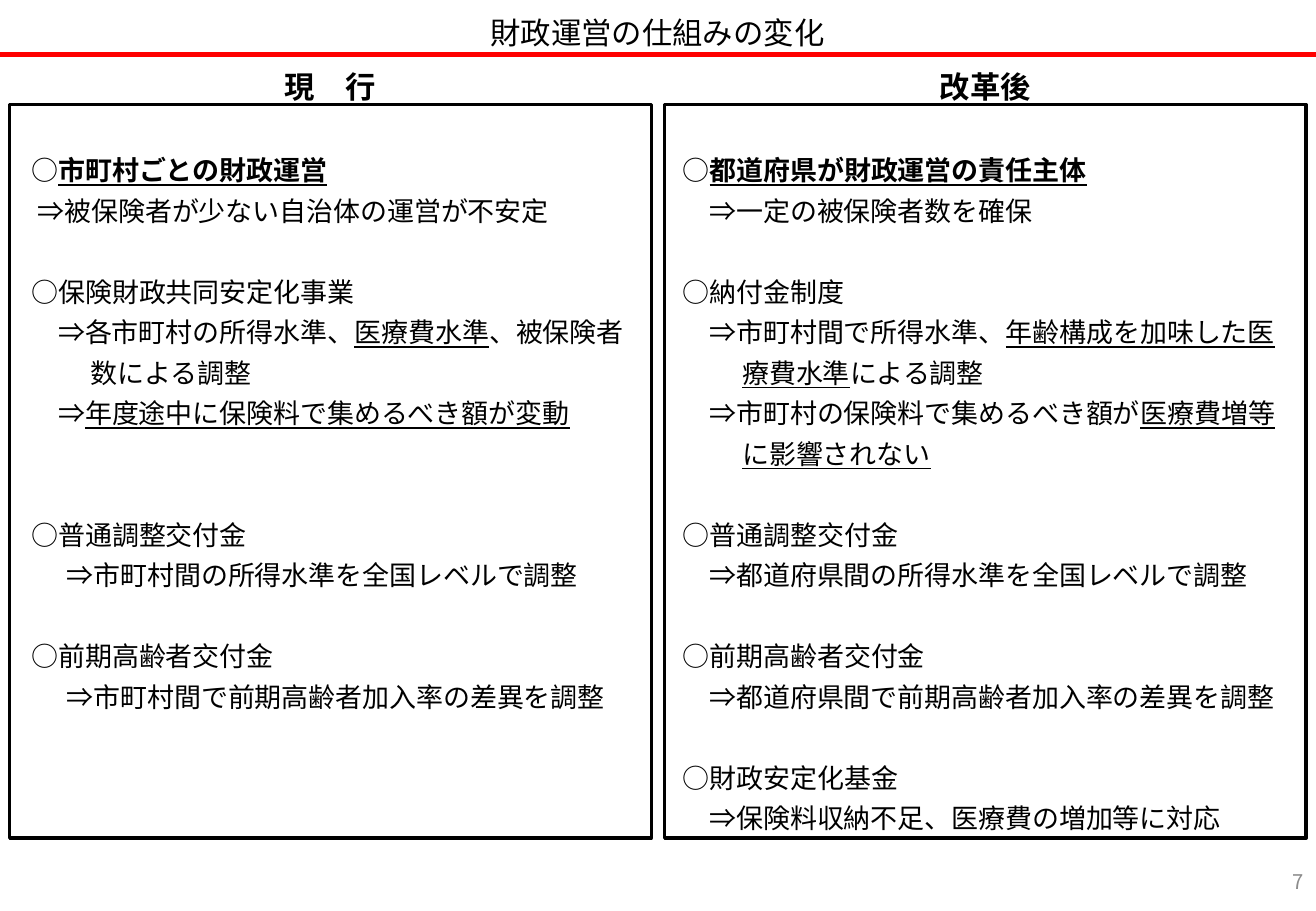
import dataclasses

import lxml.etree
import pptx
import pptx.dml.color
import pptx.enum.shapes
import pptx.enum.text
import pptx.oxml.ns
import pptx.util

ALIGN = pptx.enum.text.PP_ALIGN
ANCHOR = pptx.enum.text.MSO_ANCHOR


@dataclasses.dataclass(frozen=True)
class Theme:
    black: str = "000000"
    red: str = "FF0000"
    gray: str = "8C8C8C"
    font: str = "Noto Sans CJK JP"
    heading_font: str = "Calibri"
    title_size: int = 18
    body_size: int = 16
    number_size: int = 12
    title_leading: int = 28
    body_leading: int = 24


@dataclasses.dataclass(frozen=True)
class Box:
    left: float
    top: float
    width: float
    height: float


THEME = Theme()
SLIDE_WIDTH = pptx.util.Inches(10.83)
SLIDE_HEIGHT = pptx.util.Inches(7.5)
GRID = 100

PLAIN = {}
UNDERLINED = {"underline": True}
STRONG = {"underline": True, "bold": True}

ITEM = {"margin": 0.19, "indent": -0.19}
NEXT_ITEM = {**ITEM, "blank_lines": 1}
LATE_ITEM = {**ITEM, "blank_lines": 2}
SLIGHT = {"margin": 0.05}
DETAIL = {"margin": 0.22}
DEEP = {"margin": 0.29}
HANGING = {"margin": 0.49, "indent": -0.27}

CURRENT = [
    (ITEM, [("○", PLAIN), ("市町村ごとの財政運営", STRONG)]),
    (SLIGHT, [("⇒被保険者が少ない自治体の運営が不安定", PLAIN)]),
    (NEXT_ITEM, [("○保険財政共同安定化事業", PLAIN)]),
    (HANGING, [("⇒各市町村の所得水準、", PLAIN), ("医療費水準", UNDERLINED),
               ("、被保険者数による調整", PLAIN)]),
    (HANGING, [("⇒", PLAIN), ("年度途中に保険料で集めるべき額が変動", UNDERLINED)]),
    (LATE_ITEM, [("○普通調整交付金", PLAIN)]),
    (DEEP, [("⇒市町村間の所得水準を全国レベルで調整", PLAIN)]),
    (NEXT_ITEM, [("○前期高齢者交付金", PLAIN)]),
    (DEEP, [("⇒市町村間で前期高齢者加入率の差異を調整", PLAIN)]),
]

REFORMED = [
    (ITEM, [("○", PLAIN), ("都道府県が財政運営の責任主体", STRONG)]),
    (DETAIL, [("⇒一定の被保険者数を確保", PLAIN)]),
    (NEXT_ITEM, [("○納付金制度", PLAIN)]),
    (HANGING, [("⇒市町村間で所得水準、", PLAIN),
               ("年齢構成を加味した医療費水準", UNDERLINED), ("による調整", PLAIN)]),
    (HANGING, [("⇒市町村の保険料で集めるべき額が", PLAIN),
               ("医療費増等に影響されない", UNDERLINED)]),
    (NEXT_ITEM, [("○普通調整交付金", PLAIN)]),
    (DETAIL, [("⇒都道府県間の所得水準を全国レベルで調整", PLAIN)]),
    (NEXT_ITEM, [("○前期高齢者交付金", PLAIN)]),
    (DETAIL, [("⇒都道府県間で前期高齢者加入率の差異を調整", PLAIN)]),
    (NEXT_ITEM, [("○財政安定化基金", PLAIN)]),
    (DETAIL, [("⇒保険料収納不足、医療費の増加等に対応", PLAIN)]),
]


def columns(count):
    return round(SLIDE_WIDTH * count / GRID)


def rows(count):
    return round(SLIDE_HEIGHT * count / GRID)


def place(box):
    return columns(box.left), rows(box.top), columns(box.width), rows(box.height)


def color(value):
    return pptx.dml.color.RGBColor.from_string(value)


def add_run(paragraph, text, size, font, fill, bold=False, underline=False):
    run = paragraph.add_run()
    run.text = text
    run.font.size = pptx.util.Pt(size)
    run.font.name = font
    run.font.bold = bold
    run.font.underline = underline
    run.font.color.rgb = color(fill)
    east_asian = lxml.etree.SubElement(
        run.font._element, pptx.oxml.ns.qn("a:ea"))
    east_asian.set("typeface", THEME.font)


def add_text(slide, box, content, size=THEME.body_size, font=THEME.font,
             fill=THEME.black, bold=False, align=ALIGN.LEFT, anchor=ANCHOR.TOP,
             leading=None):
    frame = slide.shapes.add_textbox(*place(box)).text_frame
    frame.word_wrap = True
    frame.vertical_anchor = anchor
    lines = [({}, [(content, {"bold": bold})])] if isinstance(content, str) else content
    for index, (layout, runs) in enumerate(lines):
        paragraph = frame.add_paragraph() if index else frame.paragraphs[0]
        paragraph.alignment = align
        if leading:
            paragraph.line_spacing = pptx.util.Pt(leading)
            paragraph.space_before = pptx.util.Pt(
                leading * layout.get("blank_lines", 0))
        properties = paragraph._p.get_or_add_pPr()
        properties.set("marL", str(pptx.util.Inches(layout.get("margin", 0))))
        properties.set("indent", str(pptx.util.Inches(layout.get("indent", 0))))
        for text, style in runs:
            add_run(paragraph, text, size, font, fill, **style)


def add_header(slide, box, title):
    add_text(slide, box, title, size=THEME.title_size, align=ALIGN.CENTER,
             leading=THEME.title_leading)
    line_top = rows(box.top + box.height - 0.26)
    rule = slide.shapes.add_connector(
        pptx.enum.shapes.MSO_CONNECTOR.STRAIGHT, 0, line_top, SLIDE_WIDTH, line_top)
    rule.line.color.rgb = color(THEME.red)
    rule.line.width = pptx.util.Pt(3)
    lxml.etree.SubElement(rule._element.spPr, pptx.oxml.ns.qn("a:effectLst"))


def add_panel(slide, box, heading, lines, padding):
    frame = slide.shapes.add_shape(
        pptx.enum.shapes.MSO_SHAPE.RECTANGLE, *place(box))
    frame.shadow.inherit = False
    frame.fill.background()
    frame.line.color.rgb = color(THEME.black)
    frame.line.width = pptx.util.Pt(2)
    add_text(slide, Box(box.left, box.top - 4.67, box.width, 5.33), heading,
             size=THEME.title_size, font=THEME.heading_font, bold=True,
             align=ALIGN.CENTER)
    add_text(slide,
             Box(box.left + padding, box.top + 3.87, box.width - 1.35, box.height - 4),
             lines, leading=THEME.body_leading)


def add_page_number(slide, box, number):
    add_text(slide, box, number, size=THEME.number_size, fill=THEME.gray,
             align=ALIGN.RIGHT, anchor=ANCHOR.MIDDLE)


def main():
    presentation = pptx.Presentation()
    presentation.slide_width = SLIDE_WIDTH
    presentation.slide_height = SLIDE_HEIGHT
    slide = presentation.slides.add_slide(presentation.slide_layouts[6])
    add_header(slide, Box(0.28, -0.27, 99.35, 6.53), "財政運営の仕組みの変化")
    add_panel(slide, Box(0.74, 11.47, 48.75, 80.53), "現　行", CURRENT, 0.74)
    add_panel(slide, Box(50.51, 11.47, 48.75, 80.53), "改革後", REFORMED, 0.46)
    add_page_number(slide, Box(76.82, 94.13, 23.18, 5.33), "7")
    presentation.save("out.pptx")


if __name__ == "__main__":
    main()
